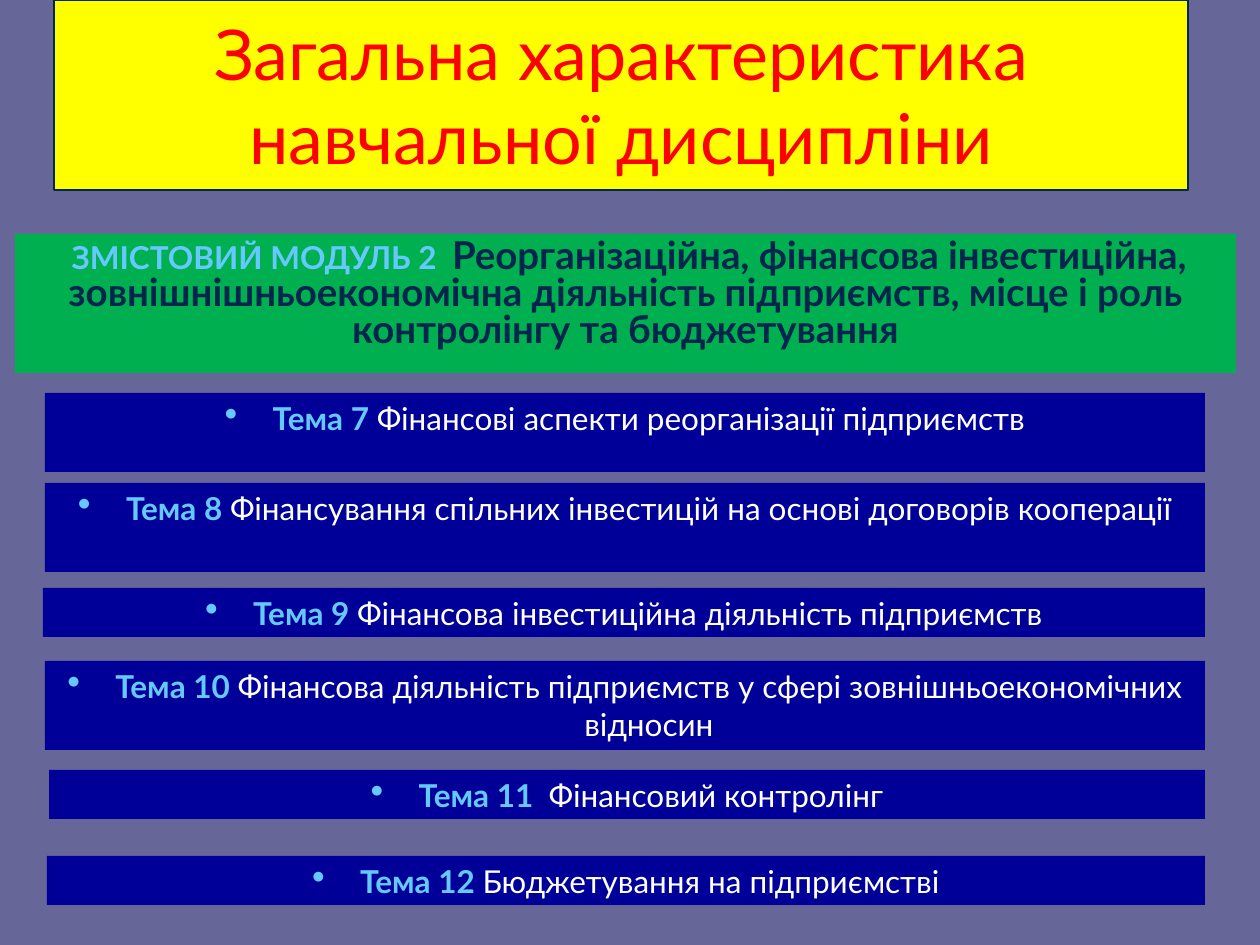
"""Build the course overview slide listing the topics of module 2."""
from lxml.etree import SubElement
from pptx import Presentation
from pptx.dml.color import RGBColor
from pptx.enum.shapes import MSO_SHAPE as Shape
from pptx.enum.text import MSO_ANCHOR as Anchor, PP_ALIGN as Align
from pptx.oxml.ns import qn
from pptx.util import Pt

EMU_PER_PX = 914400 / 126
FONT = "Lato"
SKY, NAVY, BLUE, WHITE = "65C8FF", "00264D", "000099", "FFFFFF"
TOPICS = [
    ((45, 393, 1160, 79), "Тема 7 ", "Фінансові аспекти реорганізації підприємств"),
    ((45, 483, 1160, 89), "Тема 8 ", "Фінансування спільних інвестицій на основі договорів кооперації"),
    ((43, 588, 1162, 49), "Тема 9 ", "Фінансова інвестиційна діяльність підприємств"),
    ((45, 661, 1160, 89), "Тема 10 ", "Фінансова діяльність підприємств у сфері зовнішньоекономічних відносин"),
    ((49, 770, 1156, 49), "Тема 11  ", "Фінансовий контролінг"),
    ((47, 856, 1158, 49), "Тема 12 ", "Бюджетування на підприємстві"),
]


def px(length):
    return round(length * EMU_PER_PX)


def color(code):
    return RGBColor.from_string(code)


def add_panel(slide, box, fill, outline=None, anchor=Anchor.TOP):
    panel = slide.shapes.add_shape(Shape.RECTANGLE, *map(px, box))
    panel.shadow.inherit = False
    panel.fill.solid()
    panel.fill.fore_color.rgb = color(fill)
    if outline:
        panel.line.color.rgb = color(outline)
        panel.line.width = Pt(0.75)
    else:
        panel.line.fill.background()
    panel.text_frame.word_wrap = True
    panel.text_frame.vertical_anchor = anchor
    paragraph = panel.text_frame.paragraphs[0]
    paragraph.alignment = Align.CENTER
    return paragraph


def add_bullet(paragraph):
    properties = paragraph._p.get_or_add_pPr()
    properties.set("marL", str(px(48)))
    properties.set("indent", str(px(-48)))
    bullet_color = SubElement(properties, qn("a:buClr"))
    SubElement(bullet_color, qn("a:srgbClr"), val=SKY)
    SubElement(properties, qn("a:buSzPct"), val="120000")
    SubElement(properties, qn("a:buChar"), char="•")


def add_text(paragraph, text, size, text_color, bold=False):
    run = paragraph.add_run()
    run.text = text
    run.font.size = Pt(size)
    run.font.bold = bold
    run.font.color.rgb = color(text_color)


def add_title(slide):
    title = add_panel(slide, (54, 0, 1134, 190), "FFFF00", NAVY, Anchor.MIDDLE)
    title.font.name = FONT
    add_text(title, "Загальна характеристика навчальної дисципліни", 40, "FF0000")


def add_module(slide):
    module = add_panel(slide, (15, 234, 1221, 139), "00B050")
    module.line_spacing = 0.8
    module.font.name = FONT
    add_text(module, " ЗМІСТОВИЙ МОДУЛЬ 2  ", 18, SKY, True)
    add_text(module, "Реорганізаційна, фінансова інвестиційна, "
             "зовнішнішньоекономічна діяльність підприємств, "
             "місце і роль контролінгу та бюджетування", 22, NAVY, True)


def add_topic(slide, box, number, name):
    topic = add_panel(slide, box, BLUE)
    add_bullet(topic)
    topic.font.name = FONT
    add_text(topic, number, 18, SKY, True)
    add_text(topic, name, 18, WHITE)


def main():
    deck = Presentation()
    deck.slide_width, deck.slide_height = px(1260), px(945)
    slide = deck.slides.add_slide(deck.slide_layouts[6])
    slide.background.fill.solid()
    slide.background.fill.fore_color.rgb = color("666699")
    add_module(slide)
    add_title(slide)
    for box, number, name in TOPICS:
        add_topic(slide, box, number, name)
    deck.save("out.pptx")


if __name__ == "__main__":
    main()
